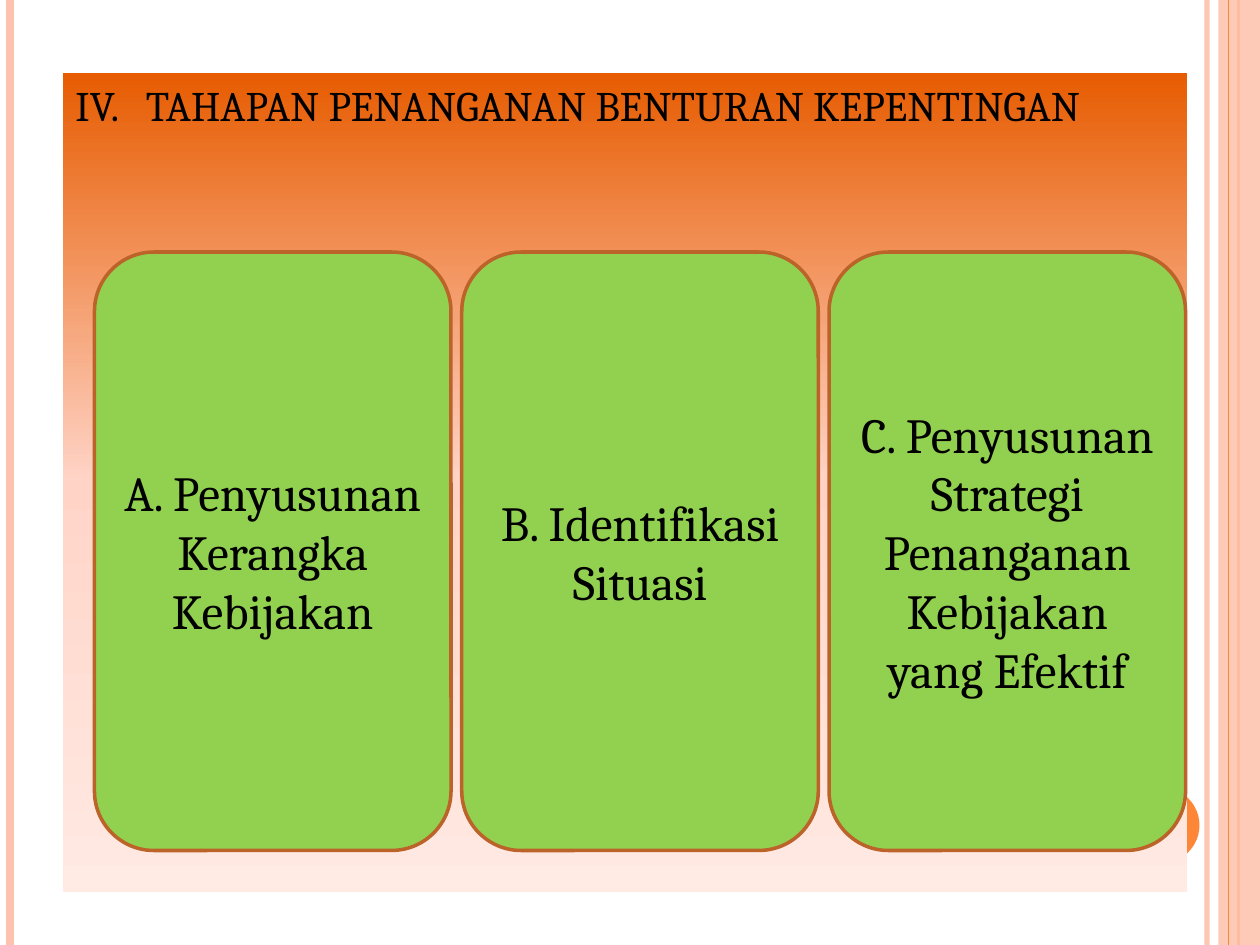
from copy import deepcopy

from lxml import etree
from pptx import Presentation
from pptx.dml.color import RGBColor
from pptx.enum.shapes import MSO_CONNECTOR, MSO_SHAPE
from pptx.enum.text import MSO_ANCHOR, PP_ALIGN
from pptx.oxml.ns import qn
from pptx.util import Inches, Pt

TITLE = "TAHAPAN PENANGANAN BENTURAN KEPENTINGAN"
STAGES = [
    "A. Penyusunan Kerangka Kebijakan",
    "B. Identifikasi Situasi",
    "C. Penyusunan Strategi Penanganan Kebijakan yang Efektif",
]
COLORS = {
    "peach": "FEC3AE", "orange": "FE8637", "green": "92D050",
    "brown": "BC6329", "text": "000000",
}
PANEL_STOPS = [(0, "E75C01"), (0.5, "FFD4C7"), (1, "FFEAE4")]
FONT = "Cambria"
WIDTH, HEIGHT = 10, 7.5

# Vertical rules: x, colour, width in points, opacity in percent
OUTER_RULES = [
    (9.58, "peach", 3, 93),
    (0.08, "peach", 4.5, 100),
    (9.83, "orange", 1.5, 100),
]
INNER_RULE = (9.75, "orange", 0.75, 100)

# Stage boxes: first left edge, top, size and distance between left edges
BOX_LEFT, BOX_TOP, BOX_W, BOX_H = 0.75, 2, 2.83, 4.75
BOX_STEP = 2.915


def rgb(name):
    return RGBColor.from_string(COLORS[name])


def set_opacity(element, percent):
    color = element.find(".//" + qn("a:srgbClr"))
    etree.SubElement(color, qn("a:alpha"), val=str(percent * 1000))


def add_rule(slide, x, color, width, opacity):
    line = slide.shapes.add_connector(
        MSO_CONNECTOR.STRAIGHT, Inches(x), 0, Inches(x), Inches(HEIGHT))
    line.line.color.rgb = rgb(color)
    line.line.width = Pt(width)
    if opacity < 100:
        set_opacity(line.line._ln, opacity)
    etree.SubElement(line._element.spPr, qn("a:effectLst"))


def add_block(slide, kind, left, top, width, height, color=None):
    s = slide.shapes.add_shape(
        kind, Inches(left), Inches(top), Inches(width), Inches(height))
    s.shadow.inherit = False
    s.line.fill.background()
    if color:
        s.fill.solid()
        s.fill.fore_color.rgb = rgb(color)
    return s


def write(s, text, size, align, anchor):
    tf = s.text_frame
    tf.word_wrap = True
    tf.vertical_anchor = anchor
    p = tf.paragraphs[0]
    p.text = text
    p.alignment = align
    p.font.name = FONT
    p.font.size = Pt(size)
    p.font.color.rgb = rgb("text")
    for r in p.runs:
        r.font.name = FONT
        r.font.size = Pt(size)
        r.font.color.rgb = rgb("text")
    return p


def fill_gradient(s, stops):
    s.fill.gradient()
    s.fill.gradient_angle = 270
    gs_list = s._element.spPr.find(".//" + qn("a:gsLst"))
    gs_list.append(deepcopy(gs_list[-1]))
    for stop, (position, color) in zip(s.fill.gradient_stops, stops):
        stop.position = position
        stop.color.rgb = RGBColor.from_string(color)


def number_roman(p, start, indent):
    pPr = p._p.get_or_add_pPr()
    pPr.set("marL", str(Inches(indent)))
    pPr.set("indent", str(-Inches(indent)))
    bullet = etree.Element(
        qn("a:buAutoNum"), type="romanUcPeriod", startAt=str(start))
    pPr.find(qn("a:defRPr")).addprevious(bullet)


def main():
    prs = Presentation()
    prs.slide_width, prs.slide_height = Inches(WIDTH), Inches(HEIGHT)
    slide = prs.slides.add_slide(prs.slide_layouts[6])

    # Side decoration
    for rule in OUTER_RULES:
        add_rule(slide, *rule)
    band = add_block(slide, MSO_SHAPE.RECTANGLE, 9.67, 0, 0.33, HEIGHT, "peach")
    set_opacity(band._element.spPr, 87)
    add_rule(slide, *INNER_RULE)
    add_block(slide, MSO_SHAPE.OVAL, 8.92, 6.25, 0.6, 0.6, "orange")

    # Panel with the numbered heading
    panel = add_block(slide, MSO_SHAPE.RECTANGLE, 0.5, 0.58, 8.92, 6.5)
    fill_gradient(panel, PANEL_STOPS)
    p = write(panel, TITLE, 24, PP_ALIGN.LEFT, MSO_ANCHOR.TOP)
    p.space_before = Pt(6)
    number_roman(p, 4, 0.56)

    # Stage boxes
    for i, stage in enumerate(STAGES):
        box = add_block(slide, MSO_SHAPE.ROUNDED_RECTANGLE,
                        BOX_LEFT + i * BOX_STEP, BOX_TOP, BOX_W, BOX_H, "green")
        box.line.color.rgb = rgb("brown")
        box.line.width = Pt(2)
        write(box, stage, 28, PP_ALIGN.CENTER, MSO_ANCHOR.MIDDLE)

    prs.save("out.pptx")


if __name__ == "__main__":
    main()
